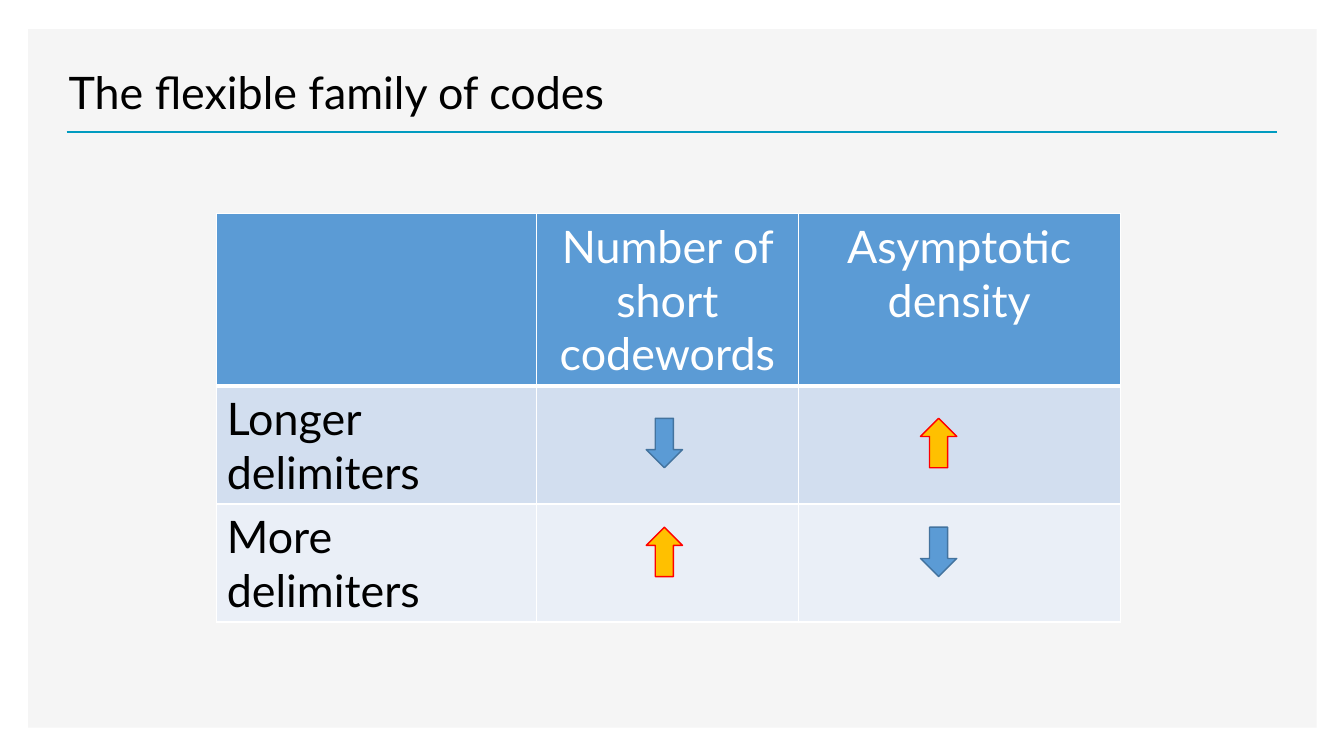
from lxml import etree
from pptx import Presentation
from pptx import util as u
from pptx.dml.color import RGBColor
from pptx.enum import shapes, text
from pptx.oxml import parse_xml
from pptx.oxml.ns import nsdecls, qn

TITLE = "The flexible family of codes"
ROWS = [
    ("", "Number of short codewords", "Asymptotic density"),
    ("Longer delimiters", "", ""),
    ("More delimiters", "", ""),
]
ARROWS = [("down", "up"), ("up", "down")]

WHITE = RGBColor(0xFF, 0xFF, 0xFF)
BLACK = RGBColor(0, 0, 0)
PANEL = RGBColor(0xF5, 0xF5, 0xF5)
TEAL = RGBColor(0x00, 0x9B, 0xC0)
BLUE = RGBColor(0x5B, 0x9B, 0xD5)
DARK_BLUE = RGBColor(0x43, 0x73, 0x9E)
GOLD = RGBColor(0xFF, 0xC0, 0x00)
RED = RGBColor(0xFF, 0x00, 0x00)
ROW_FILLS = [BLUE, RGBColor(0xD2, 0xDE, 0xEF), RGBColor(0xEA, 0xEF, 0xF7)]
ARROW_STYLES = {
    "down": (shapes.MSO_SHAPE.DOWN_ARROW, BLUE, DARK_BLUE),
    "up": (shapes.MSO_SHAPE.UP_ARROW, GOLD, RED),
}

FONT, SIZE = "Lato", 32
TABLE_LEFT, TABLE_TOP = 2.15, 2.12
COLUMN_WIDTHS = [3.17, 2.6, 3.19]
ROW_HEIGHTS = [1.71, 1.17, 1.17]
ARROW_WIDTH, ARROW_HEIGHT = 0.36, 0.49
ARROW_LEFT, ARROW_TOP = 6.41, 4.15
ARROW_STEP_X, ARROW_STEP_Y = 2.72, 1.08


def inches(*lengths):
    return [u.Inches(length) for length in lengths]


def add_span(para, words, color):
    span = para.add_run()
    span.text = words
    span.font.name = FONT
    span.font.size = u.Pt(SIZE)
    span.font.bold = False
    span.font.color.rgb = color
    return span


def add_block(page, preset, place, fill, line=None):
    block = page.shapes.add_shape(preset, *inches(*place))
    block.shadow.inherit = False
    block.fill.solid()
    block.fill.fore_color.rgb = fill
    if line is None:
        block.line.fill.background()
    else:
        block.line.color.rgb = line
        block.line.width = u.Pt(1)
    return block


def set_borders(cell, bottom):
    properties = cell._tc.get_or_add_tcPr()
    for index, (side, points) in enumerate(zip("LRTB", (1, 1, 1, bottom))):
        border = parse_xml(
            f'<a:ln{side} {nsdecls("a")} w="{u.Pt(points)}"><a:solidFill>'
            f'<a:srgbClr val="{WHITE}"/></a:solidFill></a:ln{side}>')
        properties.insert(index, border)


def add_background(page):
    panel = add_block(page, shapes.MSO_SHAPE.RECTANGLE, (0.28, 0.29, 12.78, 6.93), PANEL)
    rule = page.shapes.add_connector(
        shapes.MSO_CONNECTOR.STRAIGHT, *inches(0.66, 1.31, 12.67, 1.31))
    rule.line.color.rgb = TEAL
    rule.line.width = u.Pt(2)
    etree.SubElement(rule._element.spPr, qn("a:effectLst"))
    for index, shape in enumerate((panel, rule)):
        page.shapes._spTree.insert(2 + index, shape._element)


def fill_title(page):
    title = page.shapes.title
    title.left, title.top, title.width, title.height = inches(0.58, 0.47, 11.02, 0.87)
    frame = title.text_frame
    frame.vertical_anchor = text.MSO_ANCHOR.MIDDLE
    frame.auto_size = text.MSO_AUTO_SIZE.NONE
    para = frame.paragraphs[0]
    para.alignment = text.PP_ALIGN.LEFT
    span = add_span(para, TITLE, BLACK)
    shadow = parse_xml(
        f'<a:effectLst {nsdecls("a")}><a:outerShdw blurRad="38100" dist="38100" '
        'dir="2700000" algn="tl"><a:srgbClr val="000000"><a:alpha val="43000"/>'
        '</a:srgbClr></a:outerShdw></a:effectLst>')
    span.font._element.find(qn("a:solidFill")).addnext(shadow)


def add_table(page):
    place = inches(TABLE_LEFT, TABLE_TOP, sum(COLUMN_WIDTHS), sum(ROW_HEIGHTS))
    table = page.shapes.add_table(len(ROWS), len(COLUMN_WIDTHS), *place).table
    table.first_row = table.horz_banding = False
    for column, width in zip(table.columns, COLUMN_WIDTHS):
        column.width = u.Inches(width)
    for row, height in zip(table.rows, ROW_HEIGHTS):
        row.height = u.Inches(height)
    for r, (labels, fill) in enumerate(zip(ROWS, ROW_FILLS)):
        header = r == 0
        for c, label in enumerate(labels):
            cell = table.cell(r, c)
            cell.fill.solid()
            cell.fill.fore_color.rgb = fill
            set_borders(cell, 3 if header else 1)
            if label:
                para = cell.text_frame.paragraphs[0]
                para.alignment = text.PP_ALIGN.CENTER if header else text.PP_ALIGN.LEFT
                add_span(para, label, WHITE if header else BLACK)


def add_arrows(page):
    for r, directions in enumerate(ARROWS):
        for c, direction in enumerate(directions):
            preset, fill, line = ARROW_STYLES[direction]
            place = (ARROW_LEFT + c * ARROW_STEP_X, ARROW_TOP + r * ARROW_STEP_Y,
                     ARROW_WIDTH, ARROW_HEIGHT)
            add_block(page, preset, place, fill, line)


def main():
    deck = Presentation()
    deck.slide_width, deck.slide_height = inches(13.33, 7.5)
    page = deck.slides.add_slide(deck.slide_layouts[5])
    add_background(page)
    fill_title(page)
    add_table(page)
    add_arrows(page)
    deck.save("out.pptx")


if __name__ == "__main__":
    main()
